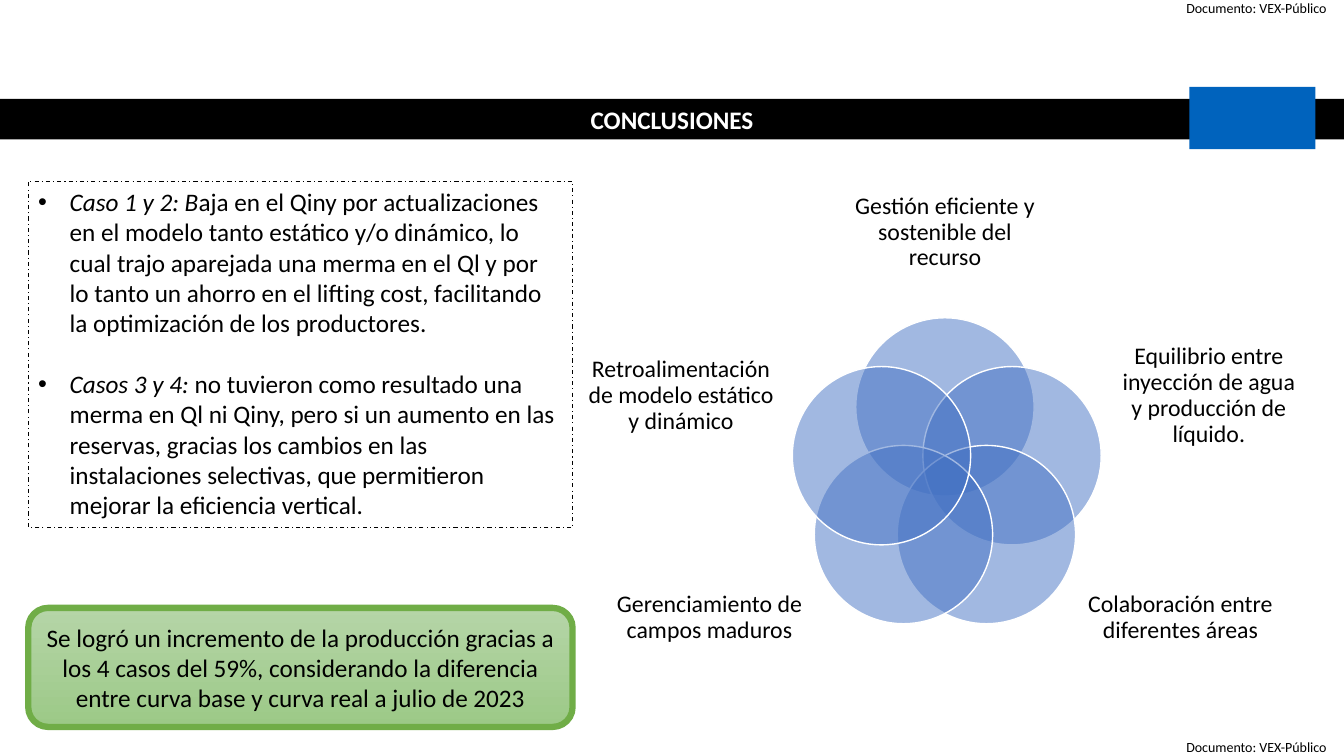
import math

import pptx
import pptx.dml.color
import pptx.enum.dml
import pptx.enum.shapes
import pptx.enum.text
import pptx.oxml
import pptx.oxml.ns
import pptx.util

Pt = pptx.util.Pt
ALIGN = pptx.enum.text.PP_ALIGN
ANCHOR = pptx.enum.text.MSO_ANCHOR
SHAPE = pptx.enum.shapes.MSO_SHAPE

WIDTH, HEIGHT = 960, 540
CLASSIFICATION = "Documento: VEX-Público"
CASES = [
    ("Caso 1 y 2: B",
     "aja en el Qiny por actualizaciones en el modelo tanto estático y/o dinámico, lo cual trajo "
     "aparejada una merma en el Ql y por lo tanto un ahorro en el lifting cost, facilitando la "
     "optimización de los productores."),
    ("Casos 3 y 4:",
     " no tuvieron como resultado una merma en Ql ni Qiny, pero si un aumento en las reservas, "
     "gracias los cambios en las instalaciones selectivas, que permitieron mejorar la eficiencia "
     "vertical."),
]
RESULT = ("Se logró un incremento de la producción gracias a los 4 casos del 59%, considerando la "
          "diferencia entre curva base y curva real a julio de 2023")
# Label, its centre (from the diagram's middle and top), its size, sideways shift of its circle
GOALS = [
    ("Gestión eficiente y sostenible del recurso", 0, 42.9, 147.6, 85.7, 0),
    ("Equilibrio entre inyección de agua y producción de líquido.", 188.5, 159.6, 132.5, 92.9, 0),
    ("Colaboración entre diferentes áreas", 168.2, 318, 132.5, 92.9, 0),
    ("Gerenciamiento de campos maduros", -168.2, 318, 132.5, 92.9, 0),
    ("Retroalimentación de modelo estático y dinámico", -188.5, 159.6, 132.5, 92.9, 2.6),
]


def color(value):
    return pptx.dml.color.RGBColor.from_string(value)


def set_font(paragraph, size, font_color="000000", bold=None):
    font = paragraph.font
    font.name = "Calibri"
    font.size = Pt(size)
    font.bold = bold
    font.color.rgb = color(font_color)


def add_shape(slide, kind, left, top, width, height, fill=None, line=None, line_width=1):
    shape = slide.shapes.add_shape(kind, Pt(left), Pt(top), Pt(width), Pt(height))
    shape.shadow.inherit = False
    if fill:
        shape.fill.solid()
        shape.fill.fore_color.rgb = color(fill)
    else:
        shape.fill.background()
    if line:
        shape.line.color.rgb = color(line)
        shape.line.width = Pt(line_width)
    else:
        shape.line.fill.background()
    return shape


def add_text(slide, text, left, top, width, height, size, align=ALIGN.CENTER,
             anchor=ANCHOR.TOP, inset=True, line_spacing=None):
    box = slide.shapes.add_textbox(Pt(left), Pt(top), Pt(width), Pt(height))
    frame = box.text_frame
    frame.word_wrap = True
    frame.vertical_anchor = anchor
    if not inset:
        frame.margin_left = frame.margin_right = frame.margin_top = frame.margin_bottom = 0
    paragraph = frame.paragraphs[0]
    paragraph.text = text
    paragraph.alignment = align
    if line_spacing:
        paragraph.line_spacing = line_spacing
    set_font(paragraph, size)


def add_bullet(paragraph, indent):
    properties = paragraph._p.get_or_add_pPr()
    properties.set("marL", str(Pt(indent)))
    properties.set("indent", str(-Pt(indent)))
    namespace = pptx.oxml.ns.nsdecls("a")
    properties.append(pptx.oxml.parse_xml(f'<a:buFont {namespace} typeface="Arial"/>'))
    properties.append(pptx.oxml.parse_xml(f'<a:buChar {namespace} char="•"/>'))


def add_classification(slide, top):
    add_text(slide, CLASSIFICATION, 827.5, top, 120, 12.2, 10, align=ALIGN.RIGHT, inset=False)


def add_title_bar(slide, top, height):
    bar = add_shape(slide, SHAPE.RECTANGLE, 0, top, WIDTH, height, fill="000000")
    bar.text_frame.vertical_anchor = ANCHOR.TOP
    paragraph = bar.text_frame.paragraphs[0]
    paragraph.text = "CONCLUSIONES"
    paragraph.alignment = ALIGN.CENTER
    set_font(paragraph, 18, "FFFFFF", bold=True)
    add_shape(slide, SHAPE.RECTANGLE, 849.6, top - 8.6, 90, 44.6, fill="0063BD")


def add_cases(slide, left, top, width, height):
    box = add_shape(slide, SHAPE.RECTANGLE, left, top, width, height, line="000000", line_width=0.75)
    box.line.dash_style = pptx.enum.dml.MSO_LINE.DASH_DOT
    frame = box.text_frame
    frame.word_wrap = True
    frame.vertical_anchor = ANCHOR.TOP
    for index, (heading, body) in enumerate(CASES):
        paragraph = frame.add_paragraph() if index else frame.paragraphs[0]
        paragraph.alignment = ALIGN.LEFT
        if index:
            paragraph.space_before = Pt(22)
        add_bullet(paragraph, 22.5)
        set_font(paragraph, 18)
        heading_run = paragraph.add_run()
        heading_run.text = heading
        heading_run.font.italic = True
        paragraph.add_run().text = body


def add_result(slide, left, top, width, height):
    panel = add_shape(slide, SHAPE.ROUNDED_RECTANGLE, left, top, width, height,
                      line="70AD47", line_width=4.5)
    panel.fill.gradient()
    panel.fill.gradient_angle = 270
    for stop, stop_color in zip(panel.fill.gradient_stops, ("B5D5A7", "9CC987")):
        stop.color.rgb = color(stop_color)
    add_text(slide, RESULT, left, top + 6.5, width, height - 13, 18)


def add_goals_diagram(slide, left, top, width):
    """Overlapping circles on a ring, each with a label outside it."""
    diameter, ring = 127.4, 50.4
    middle, ring_top = left + width / 2, top + 218
    for index, (text, label_x, label_y, label_width, label_height, shift) in enumerate(GOALS):
        angle = math.tau * index / len(GOALS)
        circle = add_shape(slide, SHAPE.OVAL,
                           middle + ring * math.sin(angle) + shift - diameter / 2,
                           ring_top - ring * math.cos(angle) - diameter / 2,
                           diameter, diameter, fill="4472C4", line="FFFFFF")
        fill_color = circle._element.spPr.find(pptx.oxml.ns.qn("a:solidFill"))[0]
        fill_color.append(pptx.oxml.parse_xml(
            f'<a:alpha {pptx.oxml.ns.nsdecls("a")} val="50000"/>'))
        add_text(slide, text, middle + label_x - label_width / 2, top + label_y - label_height / 2,
                 label_width, label_height, 17, anchor=ANCHOR.MIDDLE, inset=False,
                 line_spacing=0.9)


def main():
    presentation = pptx.Presentation()
    presentation.slide_width, presentation.slide_height = Pt(WIDTH), Pt(HEIGHT)
    slide = presentation.slides.add_slide(presentation.slide_layouts[6])
    add_classification(slide, 0)
    add_classification(slide, HEIGHT - 12.2)
    add_title_bar(slide, 70.6, 29)
    add_cases(slide, 20.2, 129.6, 388.8, 247)
    add_result(slide, 20.2, 434.2, 388.8, 85)
    add_goals_diagram(slide, 420, 123.1, 510)
    presentation.save("out.pptx")


if __name__ == "__main__":
    main()
